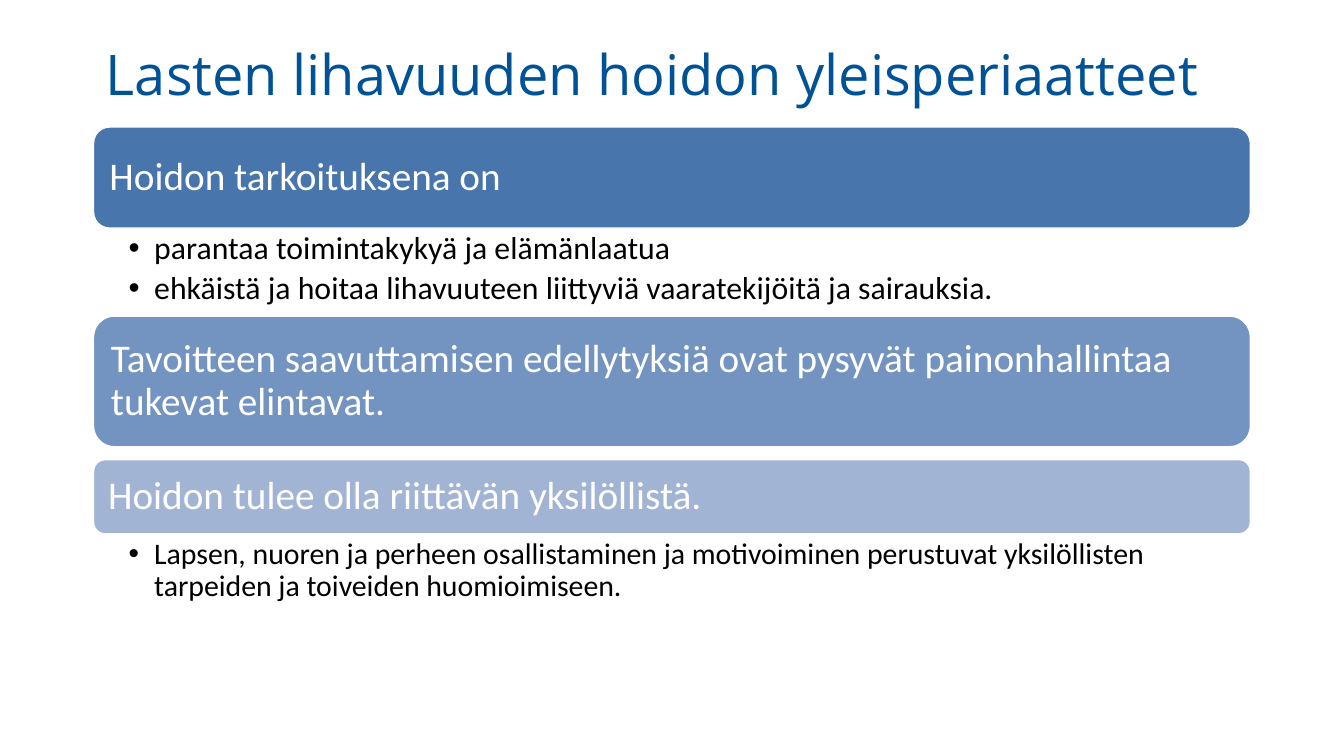
"""Build a slide on the general principles of treating childhood obesity."""
from dataclasses import dataclass

from lxml import etree
from pptx import Presentation
from pptx import util as u
from pptx.dml.color import RGBColor
from pptx.enum import shapes, text
from pptx.oxml.ns import qn

WIDTH = u.Inches(10)
HEIGHT = u.Emu(WIDTH * 9 // 16)
LEFT = 11 / 160
SPAN = 1 - 2 * LEFT
HANGING = u.Inches(0.19)
COLOURS = {
    "title": "005296",
    "purpose": "4875AC",
    "habits": "7393C1",
    "individual": "A2B4D4",
    "light": "FFFFFF",
    "dark": "000000",
}


@dataclass(frozen=True)
class Band:
    """A coloured statement; top and height are percentages of the slide height."""
    statement: str
    colour: str
    top: float
    height: float


@dataclass(frozen=True)
class Details:
    """Bulleted points; top and height are percentages of the slide height."""
    points: tuple[str, ...]
    size: int
    top: float
    height: float
    right_inset: float
    edge_inset: float


BANDS = (
    Band("Hoidon tarkoituksena on", "purpose", 16.65, 13.69),
    Band("Tavoitteen saavuttamisen edellytyksiä ovat pysyvät painonhallintaa "
         "tukevat elintavat.", "habits", 41.65, 17.6),
    Band("Hoidon tulee olla riittävän yksilöllistä.", "individual", 60.65, 10.13),
)
DETAILS = (
    Details(("parantaa toimintakykyä ja elämänlaatua",
             "ehkäistä ja hoitaa lihavuuteen liittyviä vaaratekijöitä ja sairauksia."),
            17, 30.31, 11.38, 0.13, 0.02),
    Details(("Lapsen, nuoren ja perheen osallistaminen ja motivoiminen perustuvat "
             "yksilöllisten tarpeiden ja toiveiden huomioimiseen.",),
            16, 70.76, 12.27, 0.16, 0.03),
)


def colour(name: str) -> RGBColor:
    """Return a palette colour."""
    return RGBColor.from_string(COLOURS[name])


def row(top: float, height: float) -> tuple[int, int, int, int]:
    """Return the place of a full-width row given in percentages of the height."""
    return (int(WIDTH * LEFT), int(HEIGHT * top / 100),
            int(WIDTH * SPAN), int(HEIGHT * height / 100))


def set_font(paragraph, family: str, size: int, tone: str) -> None:
    """Format a whole paragraph."""
    paragraph.font.name = family
    paragraph.font.size = u.Pt(size)
    paragraph.font.color.rgb = colour(tone)


def set_insets(frame, left: float, top: float, right: float, bottom: float) -> None:
    """Set the frame's margins in inches and let its text wrap."""
    frame.word_wrap = True
    frame.margin_left, frame.margin_top = u.Inches(left), u.Inches(top)
    frame.margin_right, frame.margin_bottom = u.Inches(right), u.Inches(bottom)


def add_bullet(paragraph) -> None:
    """Give a paragraph a hanging bullet."""
    properties = paragraph._p.get_or_add_pPr()
    properties.set("marL", str(HANGING))
    properties.set("indent", str(-HANGING))
    etree.SubElement(properties, qn("a:buFont"), typeface="Arial")
    etree.SubElement(properties, qn("a:buChar"), char="•")


def add_title(slide, wording: str) -> None:
    """Place and format the title placeholder."""
    title = slide.shapes.title
    title.left, title.top, title.width, title.height = row(4.2, 10.84)
    frame = title.text_frame
    frame.text = wording
    frame.word_wrap = True
    frame.auto_size = text.MSO_AUTO_SIZE.SHAPE_TO_FIT_TEXT
    frame.vertical_anchor = text.MSO_ANCHOR.MIDDLE
    heading = frame.paragraphs[0]
    heading.alignment = text.PP_ALIGN.LEFT
    set_font(heading, "Open Sans", 30, "title")


def add_band(slide, band: Band) -> None:
    """Draw a rounded band with its statement."""
    box = slide.shapes.add_shape(shapes.MSO_SHAPE.ROUNDED_RECTANGLE,
                                 *row(band.top, band.height))
    box.shadow.inherit = False
    box.fill.solid()
    box.fill.fore_color.rgb = colour(band.colour)
    box.line.color.rgb = colour("light")
    box.line.width = u.Pt(2)
    frame = box.text_frame
    set_insets(frame, 0.09, 0.09, 0.09, 0.09)
    frame.vertical_anchor = text.MSO_ANCHOR.MIDDLE
    frame.text = band.statement
    statement = frame.paragraphs[0]
    statement.alignment = text.PP_ALIGN.LEFT
    statement.line_spacing = 0.9
    set_font(statement, "Calibri", 21, "light")


def add_details(slide, details: Details) -> None:
    """Write the bulleted points below a band."""
    frame = slide.shapes.add_textbox(*row(details.top, details.height)).text_frame
    set_insets(frame, 0.27, details.edge_inset, details.right_inset, details.edge_inset)
    frame.text = "\n".join(details.points)
    for point in frame.paragraphs:
        point.level = 1
        add_bullet(point)
        point.line_spacing = 0.9
        point.space_after = u.Pt(details.size * 0.2)
        set_font(point, "Calibri", details.size, "dark")


def main() -> None:
    """Build and save the slide."""
    deck = Presentation()
    deck.slide_width, deck.slide_height = WIDTH, HEIGHT
    slide = deck.slides.add_slide(deck.slide_layouts.get_by_name("Title Only"))
    add_title(slide, "Lasten lihavuuden hoidon yleisperiaatteet")
    for band in BANDS:
        add_band(slide, band)
    for details in DETAILS:
        add_details(slide, details)
    deck.save("out.pptx")


if __name__ == "__main__":
    main()
